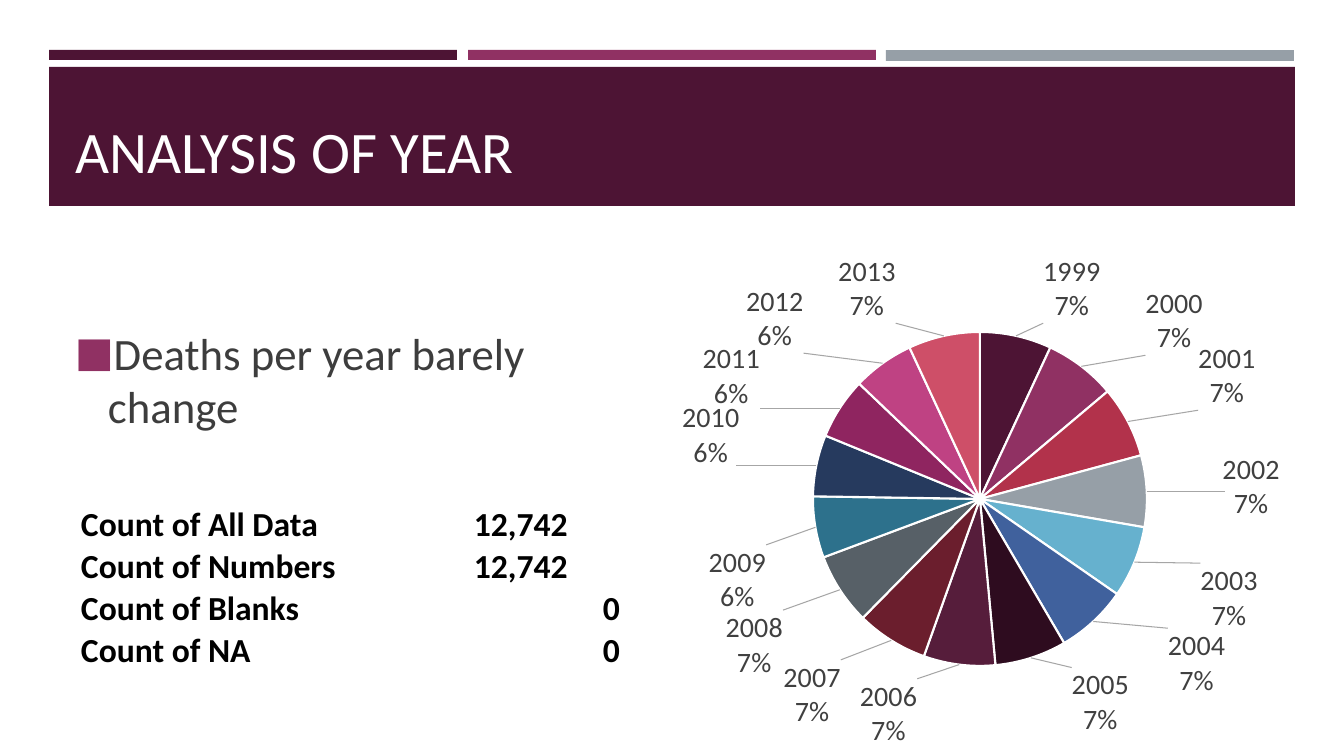
from math import cos, pi, sin

from lxml.etree import SubElement
from pptx import Presentation
from pptx.chart.data import CategoryChartData
from pptx.dml.color import RGBColor
from pptx.enum.chart import XL_CHART_TYPE as ChartType, XL_LABEL_POSITION as LabelPosition
from pptx.enum.shapes import MSO_SHAPE as Shape
from pptx.enum.text import MSO_ANCHOR as Anchor, PP_ALIGN as Align
from pptx.oxml import parse_xml
from pptx.oxml.ns import nsdecls, qn
from pptx.util import Pt

PX = 12192000 / 1344


def px(*lengths):
    return [round(length * PX) for length in lengths]


def style(font, size, color, bold=False):
    font.name, font.size, font.bold = "Calibri", Pt(size), bold
    font.color.rgb = RGBColor.from_string(color)


presentation = Presentation()
presentation.slide_width, presentation.slide_height = px(1344, 756)
slide = presentation.slides.add_slide(presentation.slide_layouts[5])

# Header bars and title
bars = [
    (49, 50, 408, 10, "4D1434"),
    (468, 50, 408, 10, "903163"),
    (886, 50, 408, 11, "969FA7"),
    (49, 67, 1246, 139, "4D1434"),
]
title = slide.shapes.title
for *box, color in bars:
    bar = slide.shapes.add_shape(Shape.RECTANGLE, *px(*box))
    bar.shadow.inherit = False
    bar.fill.solid()
    bar.fill.fore_color.rgb = RGBColor.from_string(color)
    bar.line.fill.background()
    title._element.addprevious(bar._element)

title.left, title.top, title.width, title.height = px(65, 81, 1216, 109)
title.text_frame.vertical_anchor = Anchor.BOTTOM
paragraph = title.text_frame.paragraphs[0]
paragraph.alignment = Align.LEFT
run = paragraph.add_run()
run.text = "ANALYSIS OF YEAR"
style(run.font, 42, "FFFFFF")

# Bullet
body = slide.shapes.add_textbox(*px(65, 246, 598, 320))
frame = body.text_frame
frame.word_wrap = True
frame.vertical_anchor = Anchor.MIDDLE
frame.margin_bottom, = px(59)
paragraph = frame.paragraphs[0]
run = paragraph.add_run()
run.text = "Deaths per year barely change"
style(run.font, 32, "3D3D3D")
properties = paragraph._p.get_or_add_pPr()
indent, = px(33)
properties.set("marL", str(indent))
properties.set("indent", str(-indent))
bullet_color = SubElement(properties, qn("a:buClr"))
SubElement(bullet_color, qn("a:srgbClr"), val="903163")
SubElement(properties, qn("a:buSzPct"), val="92000")
SubElement(properties, qn("a:buFont"), typeface="Calibri")
SubElement(properties, qn("a:buChar"), char="■")

# Pie chart
CHART_LEFT, CHART_TOP, CHART_WIDTH, CHART_HEIGHT = chart_box = 682, 246, 598, 510
CENTER_X, CENTER_Y, RADIUS = 980, 499, 167
LABEL_HALF_WIDTH, LABEL_HALF_HEIGHT = 29, 34
# year, percent, slice color, label center
slices = [
    ("1999", 7, "4D1434", 1071, 295),
    ("2000", 7, "903163", 1171, 326),
    ("2001", 7, "B2324B", 1222, 379),
    ("2002", 7, "969FA7", 1248, 487),
    ("2003", 7, "66B1CE", 1224, 595),
    ("2004", 7, "40619D", 1193, 658),
    ("2005", 7, "2E0C1F", 1099, 696),
    ("2006", 7, "561D3B", 889, 707),
    ("2007", 7, "6B1E2D", 815, 689),
    ("2008", 7, "576067", 759, 641),
    ("2009", 6, "2D718C", 743, 578),
    ("2010", 6, "263A5E", 713, 437),
    ("2011", 6, "8F2560", 736, 380),
    ("2012", 6, "BF4283", 778, 324),
    ("2013", 7, "CE4F68", 868, 295),
]
data = CategoryChartData()
data.categories = [row[0] for row in slices]
data.add_series("Series 1", [row[1] for row in slices])
chart = slide.shapes.add_chart(ChartType.PIE, *px(*chart_box), data).chart
style(chart.font, 20, "404040")
chart.has_title = chart.has_legend = False
chart.plots[0].vary_by_categories = True
plot_area = chart._chartSpace.chart.plotArea
for layout in plot_area.findall(qn("c:layout")):
    plot_area.remove(layout)
plot_area.insert(0, parse_xml(
    f'<c:layout {nsdecls("c")}><c:manualLayout><c:layoutTarget val="inner"/>'
    '<c:xMode val="edge"/><c:yMode val="edge"/>'
    f'<c:x val="{(CENTER_X - RADIUS - CHART_LEFT) / CHART_WIDTH:.4f}"/>'
    f'<c:y val="{(CENTER_Y - RADIUS - CHART_TOP) / CHART_HEIGHT:.4f}"/>'
    f'<c:w val="{2 * RADIUS / CHART_WIDTH:.4f}"/>'
    f'<c:h val="{2 * RADIUS / CHART_HEIGHT:.4f}"/></c:manualLayout></c:layout>'))

series = chart.plots[0].series[0]
total = sum(row[1] for row in slices)
running = 0
for index, (year, percent, color, label_x, label_y) in enumerate(slices):
    point = series.points[index]
    point.format.fill.solid()
    point.format.fill.fore_color.rgb = RGBColor.from_string(color)
    point.format.line.color.rgb = RGBColor.from_string("FFFFFF")
    point.format.line.width = Pt(1.5)
    label = point.data_label
    label.position = LabelPosition.OUTSIDE_END
    style(label.font, 20, "404040")

    # A label normally touches the rim with its corner or the middle of a side
    angle = 2 * pi * (running + percent / 2) / total
    running += percent
    across, down = sin(angle), -cos(angle)
    side_x = 0 if abs(across) < 0.087 else across / abs(across)
    side_y = 0 if abs(down) < 0.087 else down / abs(down)
    shift_x = label_x - (CENTER_X + RADIUS * across + LABEL_HALF_WIDTH * side_x)
    shift_y = label_y - (CENTER_Y + RADIUS * down + LABEL_HALF_HEIGHT * side_y)
    element = series._element.find(qn("c:dLbls")).findall(qn("c:dLbl"))[index]
    element.find(qn("c:idx")).addnext(parse_xml(
        f'<c:layout {nsdecls("c")}><c:manualLayout>'
        f'<c:x val="{shift_x / CHART_WIDTH:.4f}"/><c:y val="{shift_y / CHART_HEIGHT:.4f}"/>'
        '</c:manualLayout></c:layout>'))
    for tag, shown in (("c:showVal", "0"), ("c:showCatName", "1"), ("c:showPercent", "1")):
        element.find(qn(tag)).set("val", shown)
    SubElement(element, qn("c:separator")).text = "\n"

labels = series.data_labels
labels.show_value = False
labels.show_category_name = labels.show_percentage = True
labels.position = LabelPosition.OUTSIDE_END
style(labels.font, 20, "404040")
series._element.find(qn("c:dLbls")).append(parse_xml(
    f'<c:leaderLines {nsdecls("c", "a")}><c:spPr><a:ln w="9525"><a:solidFill>'
    '<a:srgbClr val="A6A6A6"/></a:solidFill></a:ln></c:spPr></c:leaderLines>'))

# Counts table
counts = [
    ("Count of All Data", "12,742"),
    ("Count of Numbers", "12,742"),
    ("Count of Blanks", "0"),
    ("Count of NA", "0"),
]
table = slide.shapes.add_table(4, 2, *px(80, 504, 541, 167)).table
table.first_row = table.horz_banding = False
table.columns[0].width, table.columns[1].width = px(332, 209)
for row, texts in enumerate(counts):
    table.rows[row].height, = px(42 if row < 2 else 34)
    for column, text in enumerate(texts):
        cell = table.cell(row, column)
        cell.fill.background()
        cell.vertical_anchor = Anchor.BOTTOM
        indented = column == 1 and row < 2
        cell.margin_left, cell.margin_right, cell.margin_top, cell.margin_bottom = px(
            62 if indented else 1, 1, 1, 0)
        paragraph = cell.text_frame.paragraphs[0]
        paragraph.alignment = Align.RIGHT if text == "0" else Align.LEFT
        run = paragraph.add_run()
        run.text = text
        style(run.font, 24, "000000", bold=True)

presentation.save("out.pptx")
